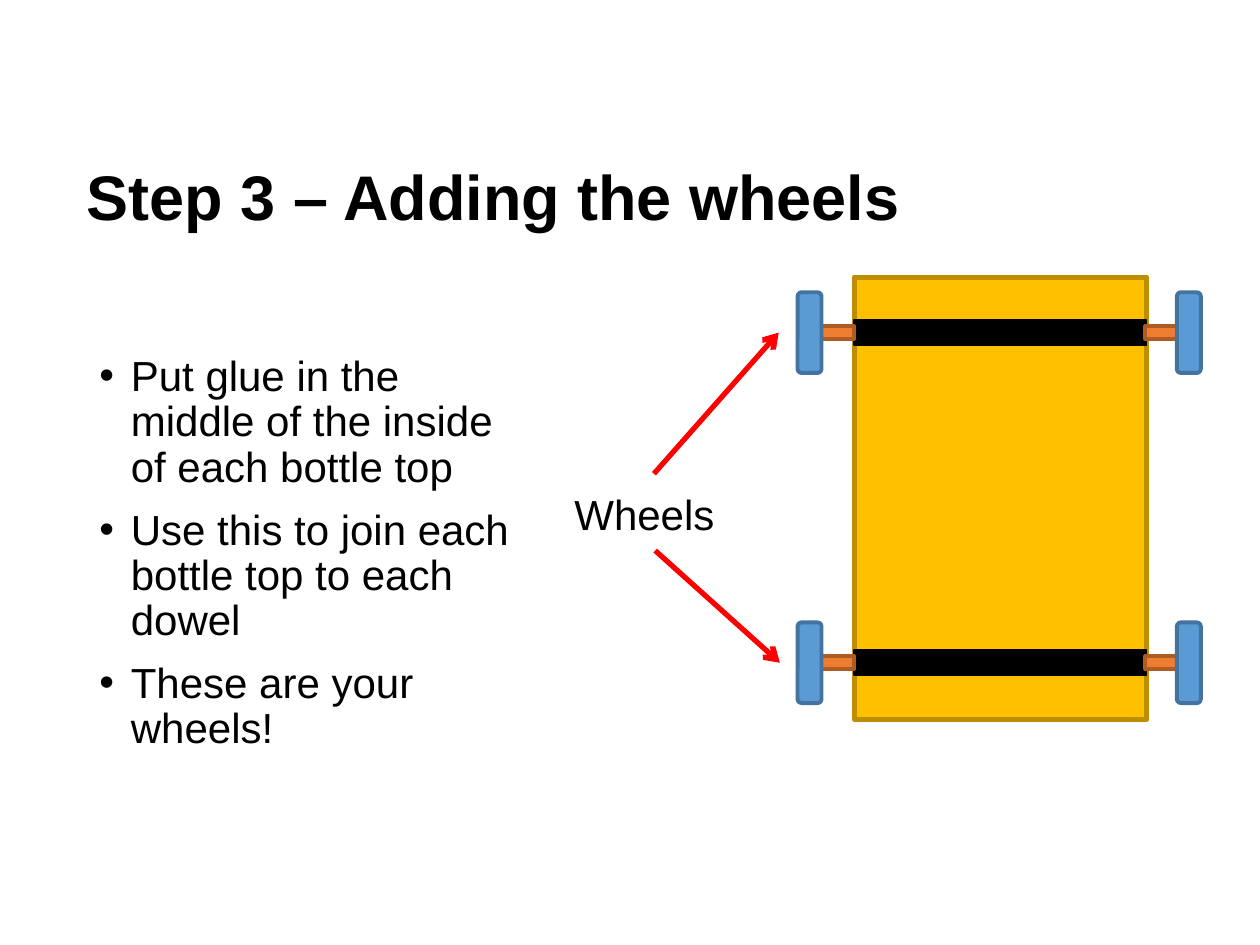
from lxml.etree import SubElement
from pptx import Presentation
from pptx.dml.color import RGBColor
from pptx.enum.shapes import MSO_CONNECTOR, MSO_SHAPE
from pptx.enum.text import MSO_ANCHOR, PP_ALIGN
from pptx.oxml.ns import qn
from pptx.util import Inches, Pt

BLACK = RGBColor(0x00, 0x00, 0x00)
RED = RGBColor(0xFF, 0x00, 0x00)
GOLD = RGBColor(0xFF, 0xC0, 0x00)
DARK_GOLD = RGBColor(0xBD, 0x8E, 0x00)
ORANGE = RGBColor(0xED, 0x7D, 0x31)
DARK_ORANGE = RGBColor(0xAF, 0x5C, 0x24)
BLUE = RGBColor(0x5B, 0x9B, 0xD5)
DARK_BLUE = RGBColor(0x43, 0x73, 0x9E)

prs = Presentation()
prs.slide_width, prs.slide_height = Inches(10), Inches(7.5)
s = prs.slides.add_slide(prs.slide_layouts[5])


def add_text(p, text, size, bold=False):
    r = p.add_run()
    r.text = text
    font = {"name": "Arial", "size": Pt(size), "bold": bold}
    for name, value in font.items():
        setattr(r.font, name, value)
    r.font.color.rgb = BLACK


def add_part(kind, box, fill, line, width):
    sp = s.shapes.add_shape(kind, *map(Inches, box))
    sp.shadow.inherit = False
    sp.fill.solid()
    sp.fill.fore_color.rgb = fill
    sp.line.color.rgb = line
    sp.line.width = Pt(width)


title = s.shapes.title
title_box = {"left": 0.59, "top": 1.13, "width": 8.02, "height": 0.92}
for name, value in title_box.items():
    setattr(title, name, Inches(value))
title.text_frame.vertical_anchor = MSO_ANCHOR.MIDDLE
p = title.text_frame.paragraphs[0]
p.alignment = PP_ALIGN.LEFT
p.line_spacing = 0.9
add_text(p, "Step 3 – Adding the wheels", 36, True)

steps = [
    "Put glue in the middle of the inside of each bottle top",
    "Use this to join each bottle top to each dowel",
    "These are your wheels!",
]
tf = s.shapes.add_textbox(Inches(0.69), Inches(2.77), Inches(3.62), Inches(3.76)).text_frame
tf.word_wrap = True
for i, step in enumerate(steps):
    p = tf.add_paragraph() if i else tf.paragraphs[0]
    pPr = p._p.get_or_add_pPr()
    pPr.set("marL", str(Inches(0.25)))
    pPr.set("indent", str(-Inches(0.25)))
    SubElement(pPr, qn("a:buFont"), typeface="Arial")
    SubElement(pPr, qn("a:buChar"), char="•")
    p.line_spacing = 0.9
    p.space_before = Pt(10 if i else 0)
    add_text(p, step, 24)

add_part(MSO_SHAPE.RECTANGLE, (6.78, 2.2, 2.32, 3.51), GOLD, DARK_GOLD, 3)
axle_tops = (2.54, 5.16)
for top in axle_tops:
    add_part(MSO_SHAPE.RECTANGLE, (6.78, top, 2.32, 0.2), BLACK, BLACK, 1)

tf = s.shapes.add_textbox(Inches(4.45), Inches(3.83), Inches(1.33), Inches(0.5)).text_frame
tf.word_wrap = True
p = tf.paragraphs[0]
p.alignment = PP_ALIGN.CENTER
add_text(p, "Wheels", 24)

for ends in ((5.19, 3.76, 6.18, 2.64), (5.2, 4.37, 6.19, 5.26)):
    arrow = s.shapes.add_connector(MSO_CONNECTOR.STRAIGHT, *map(Inches, ends))
    arrow.line.color.rgb = RED
    arrow.line.width = Pt(3)
    SubElement(arrow.line._get_or_add_ln(), qn("a:tailEnd"), type="arrow")
    SubElement(arrow._element.spPr, qn("a:effectLst"))

for top in axle_tops:
    for dowel_left, wheel_left in ((6.39, 6.33), (9.09, 9.34)):
        dowel = (dowel_left, top + 0.05, 0.39, 0.1)
        wheel = (wheel_left, top - 0.22, 0.19, 0.64)
        add_part(MSO_SHAPE.RECTANGLE, dowel, ORANGE, DARK_ORANGE, 2.25)
        add_part(MSO_SHAPE.ROUNDED_RECTANGLE, wheel, BLUE, DARK_BLUE, 2.25)

prs.save("out.pptx")
